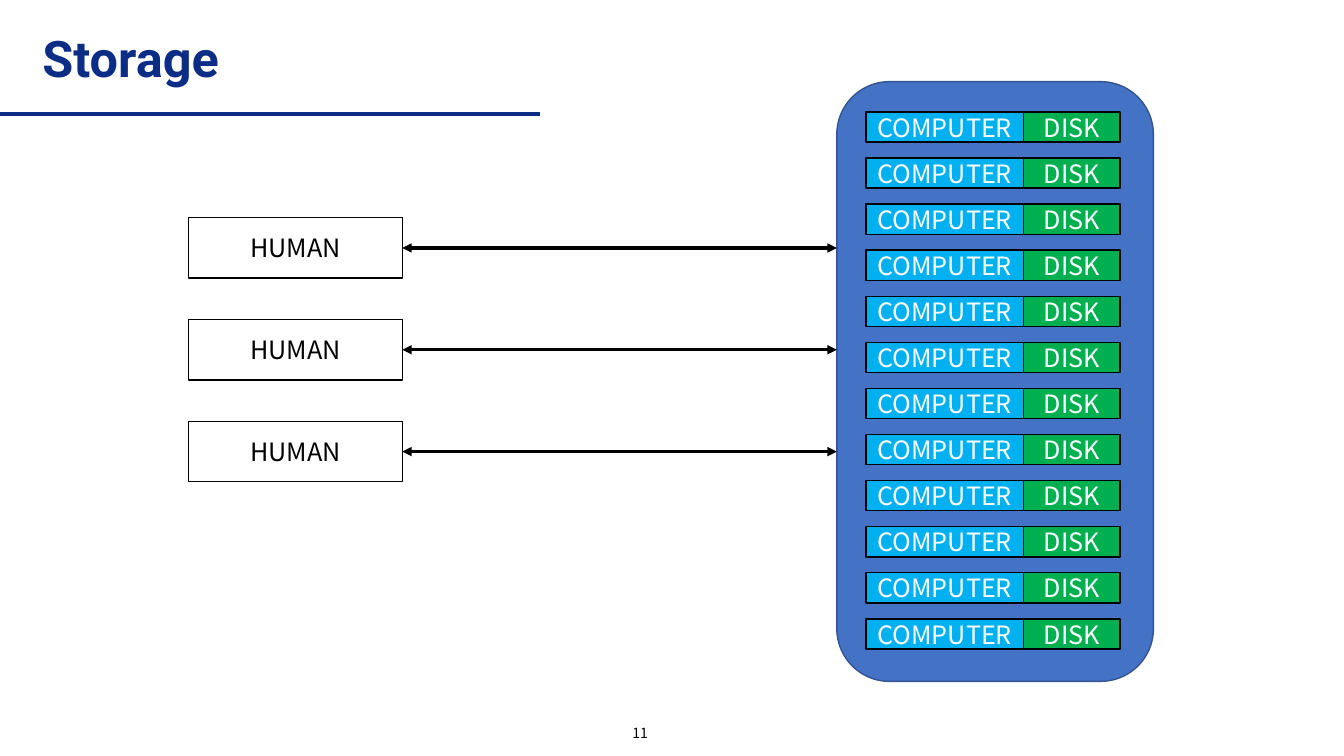
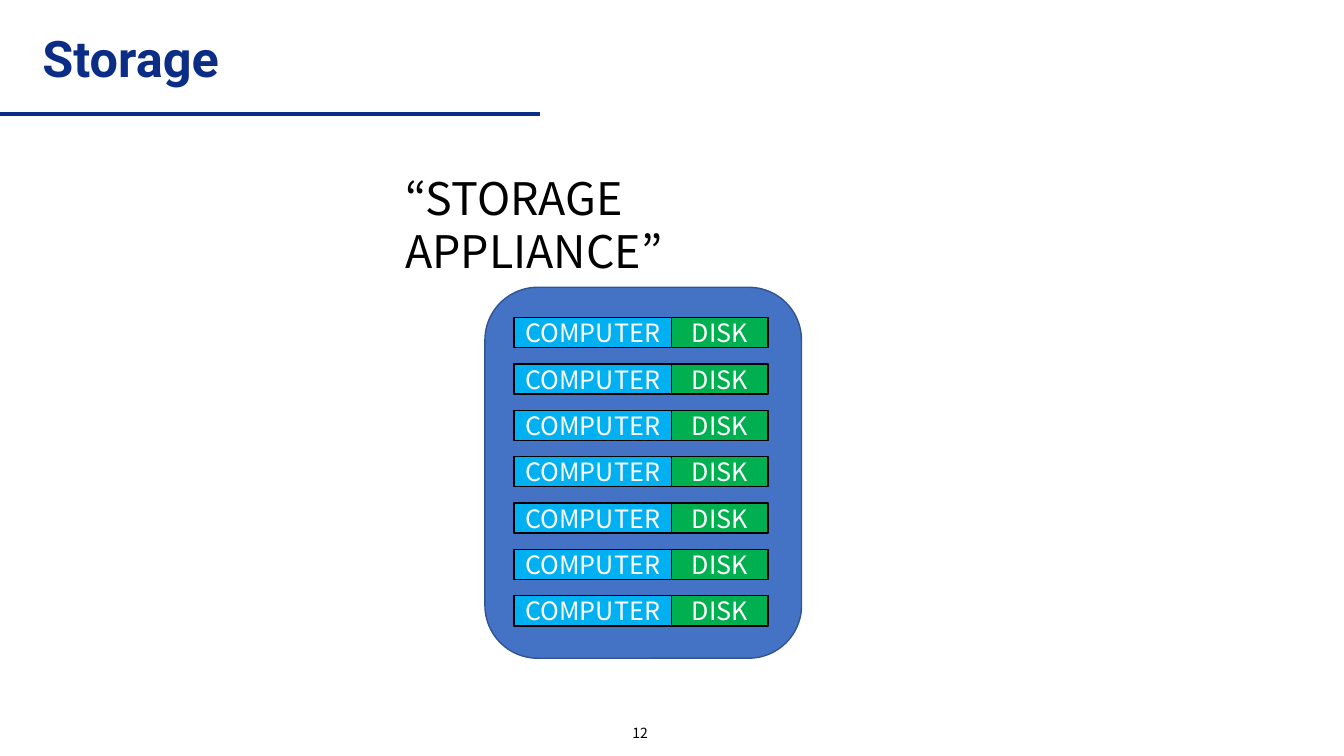
from dataclasses import dataclass

from lxml import etree
from pptx import Presentation
from pptx.dml.color import RGBColor
from pptx.enum.shapes import MSO_CONNECTOR, MSO_SHAPE
from pptx.enum.text import MSO_ANCHOR, MSO_AUTO_SIZE, PP_ALIGN
from pptx.oxml.ns import qn
from pptx.util import Inches, Pt

RECT, ROUND = MSO_SHAPE.RECTANGLE, MSO_SHAPE.ROUNDED_RECTANGLE
STRAIGHT = MSO_CONNECTOR.STRAIGHT
TOP, MIDDLE = MSO_ANCHOR.TOP, MSO_ANCHOR.MIDDLE
LEFT, CENTER = PP_ALIGN.LEFT, PP_ALIGN.CENTER
FIXED, GROW = MSO_AUTO_SIZE.NONE, MSO_AUTO_SIZE.SHAPE_TO_FIT_TEXT

BODY, HEAD = "Noto Sans CJK KR", "Roboto"
NAVY, BLACK, WHITE = "0B2D86", "000000", "FFFFFF"
BLUE, EDGE, SKY, GREEN = "4472C4", "325491", "00B0F0", "00B050"


@dataclass
class Box:
    left: float
    top: float
    width: float
    height: float

    def emu(self):
        return [Inches(v) for v in (self.left, self.top, self.width, self.height)]


@dataclass
class Unit:
    label: str
    shift: float  # distance from the panel's left edge
    width: float
    fill: str


UNITS = [Unit("DISK", 1.85, 0.96, GREEN), Unit("COMPUTER", 0.29, 1.56, SKY)]
ROW = 0.3  # row height, also the gap above the first row
FOOT = 0.32  # gap below the last row


def rgb(code: str) -> RGBColor:
    return RGBColor.from_string(code)


def write(shape, text: str, size=18, color=BLACK, font=BODY, bold=False,
          align=CENTER, anchor=MIDDLE, wrap=False, fit=FIXED, space=1.0) -> None:
    frame = shape.text_frame
    frame.text = text
    frame.word_wrap = wrap
    frame.auto_size = fit
    frame.vertical_anchor = anchor
    para = frame.paragraphs[0]
    para.alignment = align
    para.line_spacing = space
    style = para.font
    style.name, style.size, style.bold = font, Pt(size), bold
    style.color.rgb = rgb(color)


def block(slide, kind, box: Box, fill: str, edge=BLACK):
    shape = slide.shapes.add_shape(kind, *box.emu())
    shape.shadow.inherit = False
    shape.fill.solid()
    shape.fill.fore_color.rgb = rgb(fill)
    shape.line.color.rgb = rgb(edge)
    shape.line.width = Pt(1)
    return shape


def rule(slide, start, end, color: str, width: float, arrows=False):
    line = slide.shapes.add_connector(
        STRAIGHT, *[Inches(v) for v in (*start, *end)])
    line.line.color.rgb = rgb(color)
    line.line.width = Pt(width)
    if arrows:
        stroke = line.line._get_or_add_ln()
        for tag in ("a:headEnd", "a:tailEnd"):
            etree.SubElement(stroke, qn(tag), type="triangle")
    etree.SubElement(line._element.spPr, qn("a:effectLst"))
    return line


def label(slide, box: Box, text: str, **style) -> None:
    write(slide.shapes.add_textbox(*box.emu()), text, **style)


def start(deck, title: str, page: int):
    """Add a slide with the shared title, rule and page number."""
    slide = deck.slides.add_slide(deck.slide_layouts[5])
    rule(slide, (0, 1.13), (5.36, 1.13), NAVY, 3)
    head = slide.shapes.title
    head.left, head.top, head.width, head.height = Box(0.32, 0.24, 9.17, 0.74).emu()
    write(head, title, size=36, color=NAVY, font=HEAD, bold=True,
          align=LEFT, wrap=True, space=0.9)
    label(slide, Box(4.85, 7.11, 3, 0.32), str(page), size=10, wrap=True)
    return slide


def rack(slide, box: Box, count: int) -> None:
    """Draw a panel with evenly spread computer and disk rows."""
    block(slide, ROUND, box, BLUE, EDGE)
    pitch = (box.height - 2 * ROW - FOOT) / (count - 1)
    for row in range(count):
        top = box.top + ROW + row * pitch
        for unit in UNITS:
            cell = Box(box.left + unit.shift, top, unit.width, ROW)
            write(block(slide, RECT, cell, unit.fill), unit.label, color=WHITE)


def main() -> None:
    deck = Presentation()
    deck.slide_width, deck.slide_height = Inches(13.33), Inches(7.5)

    # People sharing one large rack
    slide = start(deck, "Storage", 11)
    panel = Box(8.3, 0.81, 3.14, 5.95)
    rack(slide, panel, 12)
    for row in range(3):
        box = Box(1.87, 2.16 + row * 1.01, 2.12, 0.6)
        human = block(slide, RECT, box, WHITE)
        write(human, "HUMAN")
        mid = box.top + box.height / 2
        arrow = rule(slide, (box.left + box.width, mid), (panel.left, mid),
                     BLACK, 2.25, arrows=True)
        arrow.begin_connect(human, 3)

    # The rack as an appliance
    slide = start(deck, "Storage", 12)
    rack(slide, Box(4.81, 2.85, 3.14, 3.68), 7)
    label(slide, Box(3.92, 1.64, 4.9, 0.64), "“STORAGE APPLIANCE”", size=32,
          align=LEFT, anchor=TOP, wrap=True, fit=GROW)

    deck.save("out.pptx")


if __name__ == "__main__":
    main()
